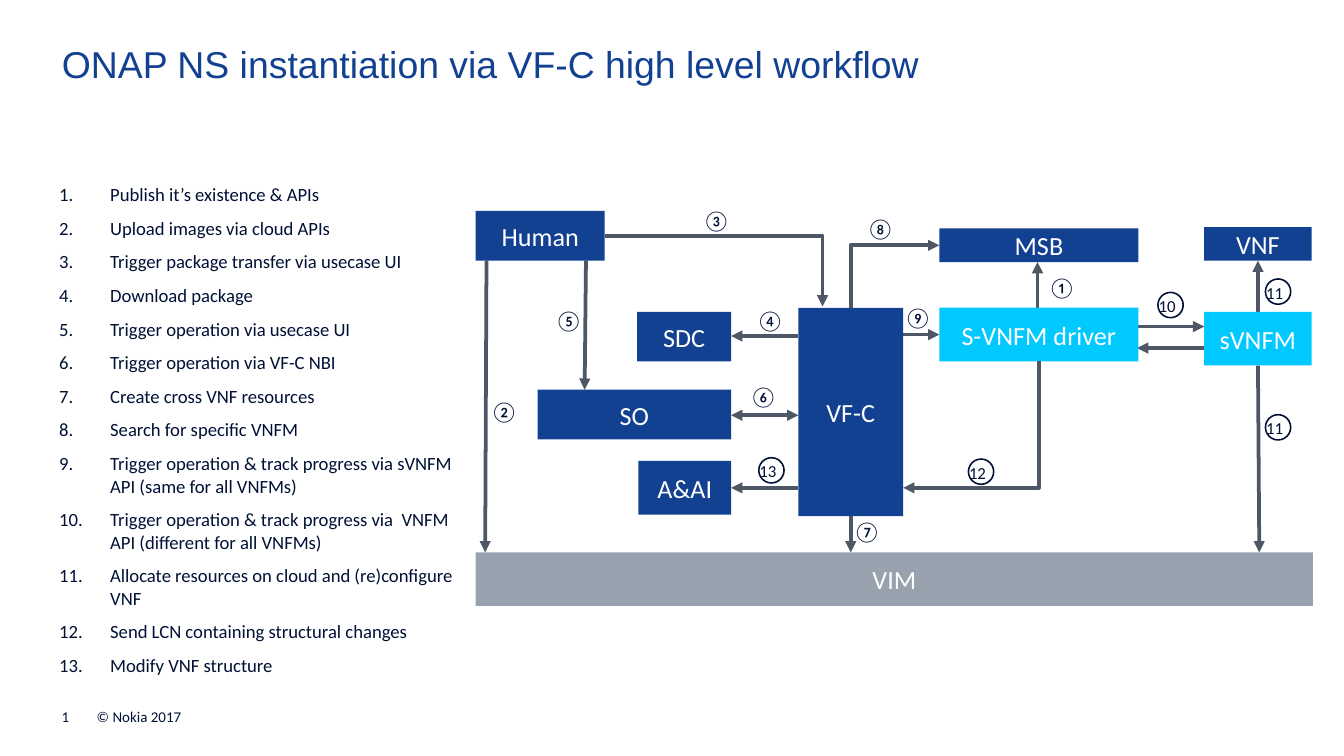
from dataclasses import dataclass

import pptx
import pptx.dml.color
import pptx.enum.shapes
import pptx.enum.text
import pptx.oxml.ns
import pptx.util
from lxml import etree

PX = 9144  # one px is a hundredth of an inch
MSO = pptx.enum.shapes.MSO_SHAPE
LINK = pptx.enum.shapes.MSO_CONNECTOR
ANCHOR = pptx.enum.text.MSO_ANCHOR
ALIGN = pptx.enum.text.PP_ALIGN
FIT = pptx.enum.text.MSO_AUTO_SIZE
TOP, LEFT, BOTTOM, RIGHT = range(4)  # connection sites of a rectangle


@dataclass(frozen=True)
class Theme:
    navy: str = "124191"
    cyan: str = "00C9FF"
    grey: str = "98A2AE"
    line: str = "4D5766"
    ink: str = "001135"
    white: str = "FFFFFF"
    heading_font: str = "Arial"
    font: str = "Calibri"
    title: int = 20
    box: int = 14
    step: int = 11
    body: int = 10
    badge: int = 9
    footer: int = 8
    stroke: int = 2


THEME = Theme()

STEPS = [
    "Publish it’s existence & APIs",
    "Upload images via cloud APIs",
    "Trigger package transfer via usecase UI",
    "Download package",
    "Trigger operation via usecase UI",
    "Trigger operation via VF-C NBI",
    "Create cross VNF resources",
    "Search for specific VNFM",
    "Trigger operation & track progress via sVNFM API (same for all VNFMs)",
    "Trigger operation & track progress via  VNFM API (different for all VNFMs)",
    "Allocate resources on cloud and (re)configure VNF",
    "Send LCN containing structural changes",
    "Modify VNF structure",
]

# name, left, top, width, height, fill
BOXES = [
    ("sVNFM", 896, 232, 80, 40, THEME.cyan),
    ("VF-C", 594, 229, 78, 155, THEME.navy),
    ("A&AI", 475, 343, 69, 40, THEME.navy),
    ("SDC", 474, 232, 70, 37, THEME.navy),
    ("MSB", 699, 170, 148, 25, THEME.navy),
    ("SO", 400, 290, 144, 37, THEME.navy),
    ("VIM", 354, 411, 623, 40, THEME.grey),
    ("Human", 354, 157, 96, 37, THEME.navy),
    ("S-VNFM driver", 699, 229, 148, 40, THEME.cyan),
    ("VNF", 896, 169, 80, 25, THEME.navy),
]

# from x, from y, to x, to y
ARROWS = [
    (772, 229, 772, 195),
    (594, 363, 544, 363),
    (594, 250, 544, 250),
    (633, 384, 633, 411),
    (362, 194, 361, 411),
    (436, 194, 435, 290),
    (936, 272, 937, 411),
    (672, 249, 699, 249),
    (844, 243, 896, 243),
    (896, 259, 846, 259),
    (936, 232, 936, 194),
]

# left and top of the number labels
CIRCLED = [
    ("①", 772, 197), ("②", 357, 289), ("③", 515, 147),
    ("④", 555, 221), ("⑤", 405, 221), ("⑥", 550, 278),
    ("⑦", 627, 378), ("⑧", 637, 153), ("⑨", 665, 219),
]
RINGED = [
    ("10", 854, 212), ("11", 934, 202), ("11", 934, 303),
    ("12", 713, 336), ("13", 557, 335),
]


def px(*values):
    return [pptx.util.Emu(v * PX) for v in values]


def rgb(color):
    return pptx.dml.color.RGBColor.from_string(color)


def add_run(p, text, size, color=THEME.ink, font=THEME.font):
    r = p.add_run()
    r.text = text
    r.font.name = font
    r.font.size = pptx.util.Pt(size)
    r.font.color.rgb = rgb(color)


def format_frame(tf, inset=0, anchor=ANCHOR.TOP, wrap=True):
    tf.auto_size = FIT.NONE
    tf.word_wrap = wrap
    tf.vertical_anchor = anchor
    margin = px(inset)[0]
    tf.margin_left = tf.margin_right = margin
    tf.margin_top = tf.margin_bottom = margin


def place(sp, left, top, width, height):
    sp.left, sp.top, sp.width, sp.height = px(left, top, width, height)


def add_title(s, text):
    sp = s.shapes.title
    place(sp, 46, 31, 909, 34)
    format_frame(sp.text_frame)
    p = sp.text_frame.paragraphs[0]
    p.alignment = ALIGN.LEFT
    add_run(p, text, THEME.title, THEME.navy, THEME.heading_font)


def add_steps(s, steps):
    sp = s.placeholders[1]
    place(sp, 44, 136, 296, 367)
    tf = sp.text_frame
    format_frame(tf)
    for i, step in enumerate(steps):
        p = tf.paragraphs[0] if i == 0 else tf.add_paragraph()
        pPr = p._p.get_or_add_pPr()
        pPr.set("marL", str(38 * PX))
        pPr.set("indent", str(-38 * PX))
        qn = pptx.oxml.ns.qn
        etree.SubElement(pPr, qn("a:buFont"), typeface=THEME.font)
        etree.SubElement(pPr, qn("a:buAutoNum"), type="arabicPeriod")
        p.space_before = pptx.util.Pt(0)
        p.space_after = pptx.util.Pt(6)
        add_run(p, step, THEME.body)


def add_text(shapes, text, left, top, width, height, size, **frame):
    sp = shapes.add_textbox(*px(left, top, width, height))
    format_frame(sp.text_frame, **frame)
    add_run(sp.text_frame.paragraphs[0], text, size)


def add_solid(shapes, kind, left, top, width, height, fill):
    sp = shapes.add_shape(kind, *px(left, top, width, height))
    sp.shadow.inherit = False
    sp.fill.solid()
    sp.fill.fore_color.rgb = rgb(fill)
    sp.line.fill.background()
    return sp


def add_box(s, name, left, top, width, height, fill):
    sp = add_solid(s.shapes, MSO.RECTANGLE, left, top, width, height, fill)
    format_frame(sp.text_frame, inset=10, anchor=ANCHOR.MIDDLE)
    p = sp.text_frame.paragraphs[0]
    p.alignment = ALIGN.CENTER
    add_run(p, name, THEME.box, THEME.white)
    return sp


def add_arrow(s, x1, y1, x2, y2, ends=("tailEnd",), kind=LINK.STRAIGHT):
    c = s.shapes.add_connector(kind, *px(x1, y1, x2, y2))
    c.line.color.rgb = rgb(THEME.line)
    c.line.width = pptx.util.Pt(THEME.stroke)
    qn = pptx.oxml.ns.qn
    spPr = c._element.spPr
    for end in ends:
        etree.SubElement(spPr.find(qn("a:ln")), qn("a:" + end), type="triangle")
    etree.SubElement(spPr, qn("a:effectLst"))
    if kind == LINK.ELBOW:  # a single corner, horizontal leg first
        spPr.find(qn("a:prstGeom")).set("prst", "bentConnector2")
    return c


def add_ringed_number(s, text, left, top):
    shapes = s.shapes.add_group_shape().shapes
    add_text(shapes, text, left, top, 39, 31, THEME.badge, inset=8)
    ring = add_solid(shapes, MSO.DONUT, left + 7, top + 5, 20, 20, THEME.ink)
    ring.adjustments[0] = 0.06


def main():
    prs = pptx.Presentation()
    prs.slide_width = px(1000)[0]
    prs.slide_height = prs.slide_width * 9 // 16
    s = prs.slides.add_slide(prs.slide_layouts[1])

    # Heading, numbered steps and footer
    add_title(s, "ONAP NS instantiation via VF-C high level workflow")
    add_steps(s, STEPS)
    for text, left, width in [("1", 46, 16), ("© Nokia 2017", 72, 197)]:
        add_text(s.shapes, text, left, 527, width, 13, THEME.footer,
                 anchor=ANCHOR.BOTTOM)

    # Straight arrows, behind the components
    for arrow in ARROWS:
        add_arrow(s, *arrow)
    add_arrow(s, 594, 309, 544, 309, ends=("headEnd", "tailEnd"))

    # Components
    boxes = {box[0]: add_box(s, *box) for box in BOXES}

    # Elbow arrows, joined to the components
    c = add_arrow(s, 450, 176, 612, 228, kind=LINK.ELBOW)
    c.begin_connect(boxes["Human"], RIGHT)
    c = add_arrow(s, 699, 182, 633, 229, ("headEnd",), LINK.ELBOW)
    c.begin_connect(boxes["MSB"], LEFT)
    c.end_connect(boxes["VF-C"], TOP)
    c = add_arrow(s, 672, 363, 772, 269, ("headEnd",), LINK.ELBOW)
    c.end_connect(boxes["S-VNFM driver"], BOTTOM)

    # Step numbers on the arrows
    for text, left, top in CIRCLED:
        add_text(s.shapes, text, left, top, 36, 34, THEME.step,
                 inset=8, wrap=False)
    for label in RINGED:
        add_ringed_number(s, *label)

    prs.save("out.pptx")


if __name__ == "__main__":
    main()
